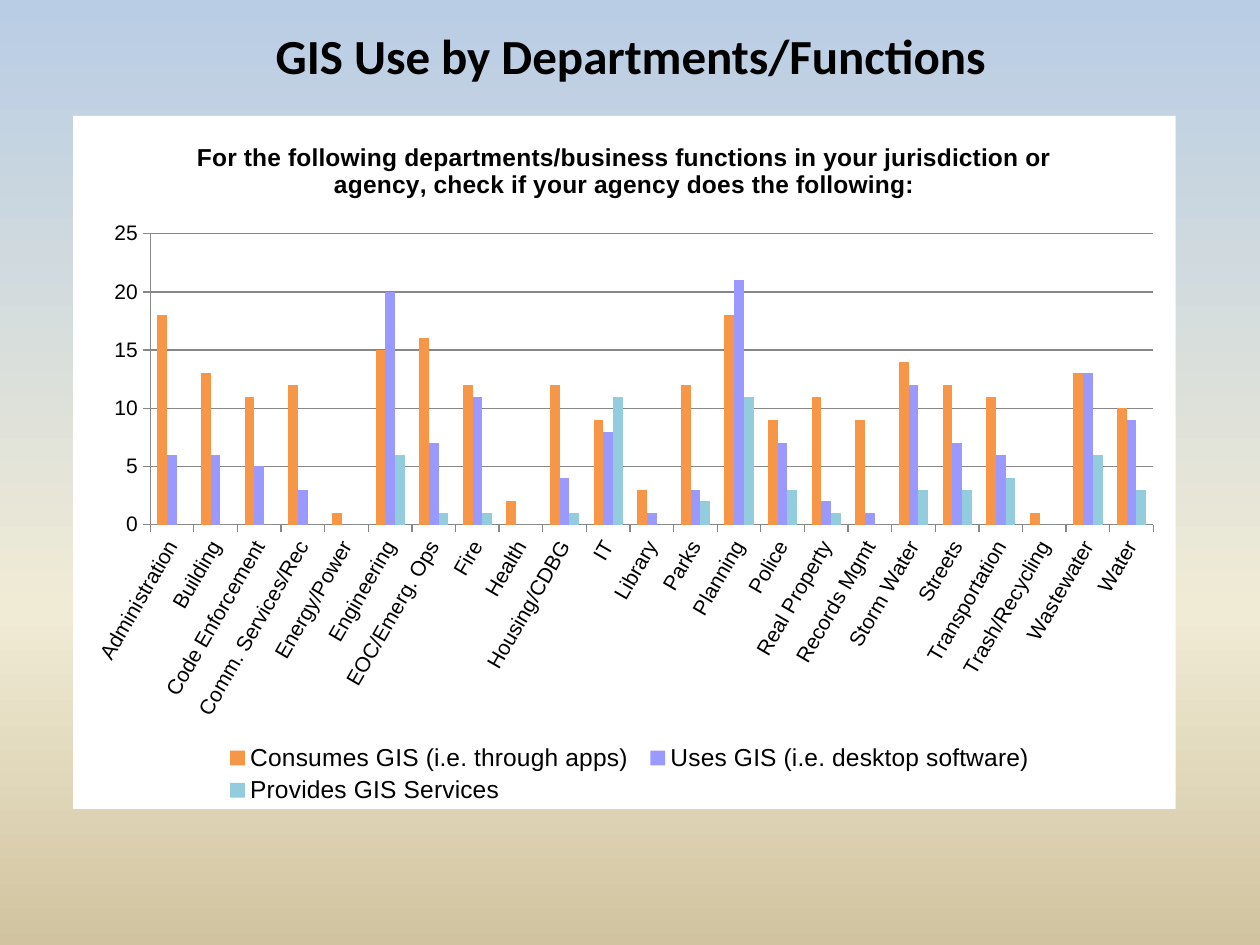
from lxml.etree import fromstring
from pptx import Presentation
from pptx.chart.data import CategoryChartData
from pptx.dml.color import RGBColor
from pptx.enum.chart import XL_CHART_TYPE, XL_LEGEND_POSITION, XL_TICK_MARK
from pptx.enum.text import MSO_ANCHOR, PP_ALIGN
from pptx.oxml.ns import nsdecls, qn
from pptx.util import Inches, Pt

COLORS = {
    "sky": "B9CDE5", "cream": "F0EBD5", "sand": "D1C39F",
    "text": "000000", "panel": "FFFFFF", "grid": "878787",
    "consumes": "F79646", "uses": "9999FF", "provides": "93CDDD",
}
# department: consumes, uses, provides
DEPARTMENTS = {
    "Administration": (18, 6, 0), "Building": (13, 6, 0),
    "Code Enforcement": (11, 5, 0), "Comm. Services/Rec": (12, 3, 0),
    "Energy/Power": (1, 0, 0), "Engineering": (15, 20, 6),
    "EOC/Emerg. Ops": (16, 7, 1), "Fire": (12, 11, 1),
    "Health": (2, 0, 0), "Housing/CDBG": (12, 4, 1),
    "IT": (9, 8, 11), "Library": (3, 1, 0),
    "Parks": (12, 3, 2), "Planning": (18, 21, 11),
    "Police": (9, 7, 3), "Real Property": (11, 2, 1),
    "Records Mgmt": (9, 1, 0), "Storm Water": (14, 12, 3),
    "Streets": (12, 7, 3), "Transportation": (11, 6, 4),
    "Trash/Recycling": (1, 0, 0), "Wastewater": (13, 13, 6),
    "Water": (10, 9, 3),
}
SERIES = {
    "Consumes GIS (i.e. through apps)": "consumes",
    "Uses GIS (i.e. desktop software)": "uses",
    "Provides GIS Services": "provides",
}


def write(frame, text, *, size, font, bold=True, spacing=None):
    paragraph = frame.paragraphs[0]
    paragraph.alignment = PP_ALIGN.CENTER
    paragraph.line_spacing = spacing
    run = paragraph.add_run()
    run.text = text
    run.font.size = Pt(size)
    run.font.name = font
    run.font.bold = bold
    run.font.color.rgb = RGBColor.from_string(COLORS["text"])


def set_layout(part, index, x, y, w, h, target=""):
    """Place a chart part by fractions of the chart's width and height."""
    for old in part.findall(qn("c:layout")):
        part.remove(old)
    part.insert(index, fromstring(
        f'<c:layout {nsdecls("c")}><c:manualLayout>{target}'
        '<c:xMode val="edge"/><c:yMode val="edge"/>'
        f'<c:x val="{x}"/><c:y val="{y}"/><c:w val="{w}"/><c:h val="{h}"/>'
        '</c:manualLayout></c:layout>'))


prs = Presentation()
prs.slide_width = Inches(10)
prs.slide_height = Inches(7.5)
slide = prs.slides.add_slide(prs.slide_layouts[5])

# Background
background = slide.background.fill
background.gradient()
background.gradient_angle = 270
stops = slide.element.find(".//" + qn("a:gsLst"))
for stop in list(stops):
    stops.remove(stop)
for percent, name in ((0, "sky"), (65, "cream"), (100, "sand")):
    stops.append(fromstring(
        f'<a:gs {nsdecls("a")} pos="{percent * 1000}">'
        f'<a:srgbClr val="{COLORS[name]}"/></a:gs>'))

# Title
title = slide.shapes.title
title.left, title.top = Inches(0.17), Inches(0.17)
title.width, title.height = Inches(9.67), Inches(0.58)
title.text_frame.vertical_anchor = MSO_ANCHOR.MIDDLE
write(title.text_frame, "GIS Use by Departments/Functions",
      size=28, font="Calibri", spacing=0.95)

# Chart
usage = CategoryChartData()
usage.categories = list(DEPARTMENTS)
for name, values in zip(SERIES, zip(*DEPARTMENTS.values())):
    usage.add_series(name, values)
chart = slide.shapes.add_chart(
    XL_CHART_TYPE.COLUMN_CLUSTERED, Inches(0.58), Inches(0.92),
    Inches(8.75), Inches(5.5), usage).chart
chart.font.size = Pt(10)
chart.font.name = "Arial"
chart.font.color.rgb = RGBColor.from_string(COLORS["text"])
chart.element.find(qn("c:chart")).addnext(fromstring(
    f'<c:spPr {nsdecls("c", "a")}><a:solidFill>'
    f'<a:srgbClr val="{COLORS["panel"]}"/></a:solidFill>'
    '<a:ln><a:noFill/></a:ln></c:spPr>'))

chart.has_title = True
write(chart.chart_title.text_frame,
      "For the following departments/business functions in your jurisdiction "
      "or agency, check if your agency does the following:",
      size=14, font="Arial")
chart.chart_title.include_in_layout = False

plot = chart.plots[0]
plot.gap_width = 150
plot.overlap = 0
plot.vary_by_categories = False
for series, name in zip(plot.series, SERIES.values()):
    series.format.fill.solid()
    series.format.fill.fore_color.rgb = RGBColor.from_string(COLORS[name])
    series.invert_if_negative = False

# Axes
departments, counts = chart.category_axis, chart.value_axis
counts.minimum_scale, counts.maximum_scale, counts.major_unit = 0, 25, 5
counts.has_major_gridlines = True
for axis in (departments, counts):
    axis.major_tick_mark = XL_TICK_MARK.OUTSIDE
    axis.tick_labels.font.size = Pt(12)
for line in (departments.format.line, counts.format.line,
             counts.major_gridlines.format.line):
    line.color.rgb = RGBColor.from_string(COLORS["grid"])
    line.width = Pt(0.75)
label_body = departments._element.find(qn("c:txPr")).find(qn("a:bodyPr"))
label_body.set("rot", str(-60 * 60000))
label_body.set("vert", "horz")

# Legend
chart.has_legend = True
chart.legend.position = XL_LEGEND_POSITION.BOTTOM
chart.legend.include_in_layout = False
chart.legend.font.size = Pt(14)

set_layout(chart.element.find(".//" + qn("c:plotArea")), 0,
           0.07, 0.17, 0.91, 0.42, '<c:layoutTarget val="inner"/>')
set_layout(chart.element.find(".//" + qn("c:legend")), 1,
           0.13, 0.9, 0.75, 0.1)

prs.save("out.pptx")
